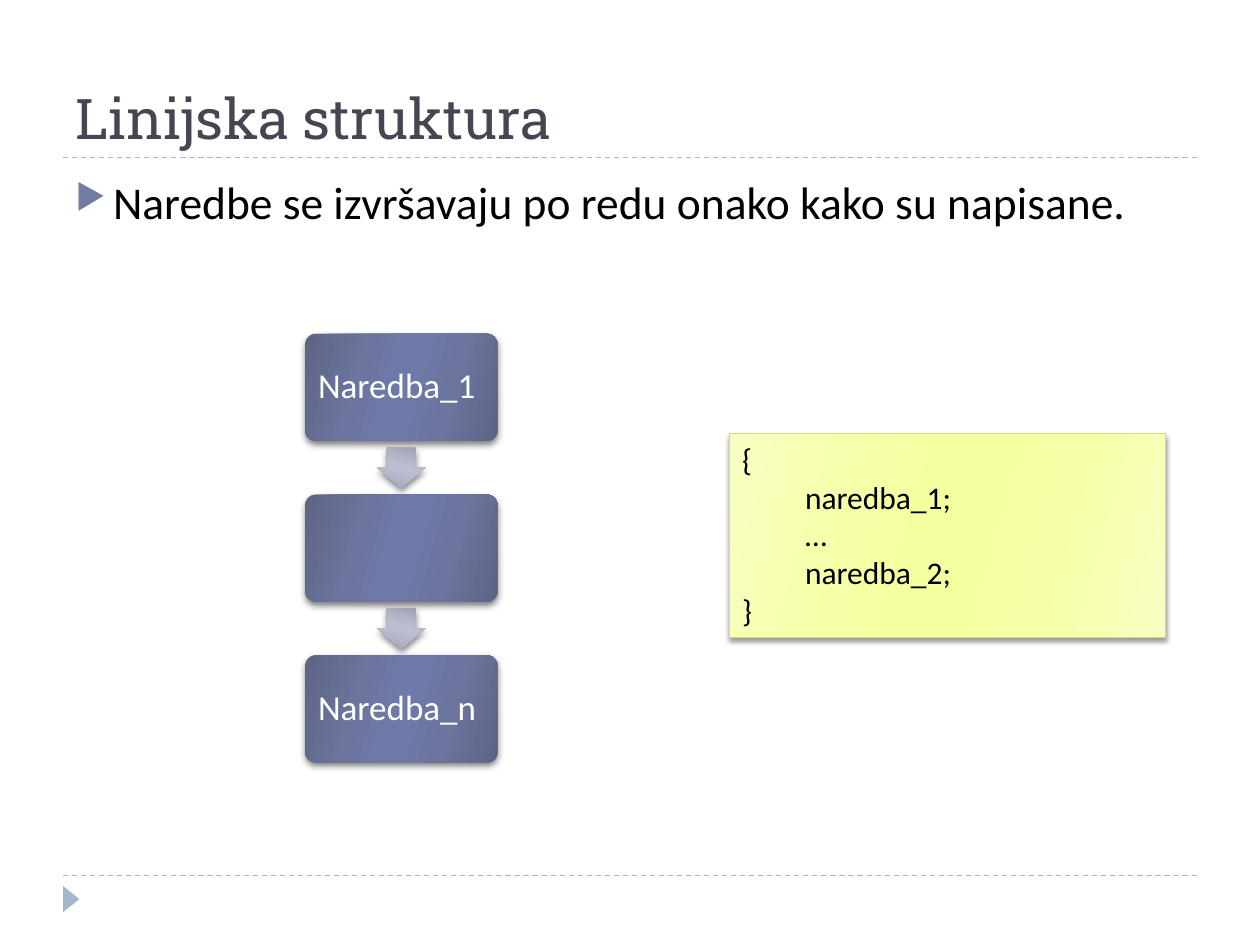
from lxml import etree
from pptx import Presentation
from pptx import util as u
from pptx.dml.color import RGBColor
from pptx.enum import dml, shapes, text
from pptx.oxml.ns import qn

SHAPE = shapes.MSO_SHAPE
STOPS = (0, 30, 45, 55, 73, 100)


def rgb(value):
    return RGBColor.from_string(value)


def sub(parent, tag, **attrs):
    return etree.SubElement(parent, qn(tag), {k: str(v) for k, v in attrs.items()})


class Deck:
    HEAD, BODY = "Roboto Slab", "Calibri"
    INK, TITLE, ACCENT, BULLET = "000000", "464653", "9FB8CD", "727CA3"
    # Edge, middle and centre tones of the symmetric gradients
    BLUE = ("5D6585", "6B759E", "6E79A7")
    GREY = ("9A9CA9", "B2B6C6", "BABED0")
    YELLOW = ("F8FEC2", "F6FFA7", "F6FF9F")

    def __init__(self):
        self.prs = Presentation()
        self.prs.slide_width, self.prs.slide_height = u.Cm(25.4), u.Cm(19.05)
        self.s = self.prs.slides.add_slide(self.prs.slide_layouts[5])

    def font(self, p, size, color, name=BODY):
        p.font.size, p.font.name = u.Pt(size), name
        p.font.color.rgb = rgb(color)

    def title(self, words, x, y, w, h):
        sp = self.s.shapes.title
        sp.left, sp.top, sp.width, sp.height = map(u.Cm, (x, y, w, h))
        tf = sp.text_frame
        tf.text = words
        tf.auto_size = text.MSO_AUTO_SIZE.NONE
        tf.vertical_anchor = text.MSO_ANCHOR.BOTTOM
        tf.paragraphs[0].alignment = text.PP_ALIGN.LEFT
        self.font(tf.paragraphs[0], 32, self.TITLE, self.HEAD)

    def bullet(self, words, x, y, w, h):
        tf = self.s.shapes.add_textbox(*map(u.Cm, (x, y, w, h))).text_frame
        tf.word_wrap = True
        p = tf.paragraphs[0]
        p.text = words
        p.space_before = u.Pt(6)
        self.font(p, 26, self.INK)
        pPr = p._p.get_or_add_pPr()
        indent = u.Cm(0.76)
        pPr.set("marL", str(indent))
        pPr.set("indent", str(-indent))
        mark = etree.Element(qn("a:buClr"))
        sub(mark, "a:srgbClr", val=self.BULLET)
        size = etree.Element(qn("a:buSzPct"), val="76000")
        char = etree.Element(qn("a:buChar"), char="▶")
        for el in (mark, size, char):
            pPr.find(qn("a:defRPr")).addprevious(el)

    def rule(self, x1, x2, y):
        c = self.s.shapes.add_connector(shapes.MSO_CONNECTOR.STRAIGHT,
                                        u.Cm(x1), u.Cm(y), u.Cm(x2), u.Cm(y))
        c.line.color.rgb = rgb(self.ACCENT)
        c.line.width = u.Pt(0.75)
        c.line.dash_style = dml.MSO_LINE.DASH
        sub(c._element.spPr, "a:effectLst")

    def shape(self, kind, x, y, w, h, adj=(), rotation=0):
        sp = self.s.shapes.add_shape(kind, *map(u.Cm, (x, y, w, h)))
        sp.rotation = rotation
        for i, value in enumerate(adj):
            sp.adjustments[i] = value
        sp.line.fill.background()
        sp.shadow.inherit = False
        return sp

    def shade(self, sp, tones, blur=4, alpha=50):
        """Give a shape a soft gradient and a shadow below it."""
        sp.fill.gradient()
        grad = sp._element.spPr.find(qn("a:gradFill"))
        for child in list(grad):
            grad.remove(child)
        stops = sub(grad, "a:gsLst")
        for pos, tone in zip(STOPS, tones + tones[::-1]):
            sub(sub(stops, "a:gs", pos=pos * 1000), "a:srgbClr", val=tone)
        sub(grad, "a:lin", ang=16 * 60000, scaled=0)
        effects = sp._element.spPr.find(qn("a:effectLst"))
        shadow = sub(effects, "a:outerShdw", blurRad=u.Pt(blur), dist=u.Pt(2),
                     dir=90 * 60000, rotWithShape=0)
        sub(sub(shadow, "a:srgbClr", val=self.INK), "a:alpha", val=alpha * 1000)

    def step(self, words, x, y, w, h):
        sp = self.shape(SHAPE.ROUNDED_RECTANGLE, x, y, w, h, [0.1])
        self.shade(sp, self.BLUE)
        if words:
            tf = sp.text_frame
            tf.text = words
            tf.margin_left = tf.margin_right = u.Cm(0.2)
            p = tf.paragraphs[0]
            p.line_spacing = 0.9
            self.font(p, 20, "FFFFFF")

    def arrow(self, cx, cy, w, h):
        sp = self.shape(SHAPE.RIGHT_ARROW, cx - w / 2, cy - h / 2, w, h, [0.6, 0.5], 90)
        self.shade(sp, self.GREY)

    def code(self, lines, x, y, w, h):
        sp = self.shape(SHAPE.RECTANGLE, x, y, w, h)
        sp.line.color.rgb = rgb("D2DA7A")
        sp.line.width = u.Pt(0.75)
        self.shade(sp, self.YELLOW, blur=3, alpha=40)
        tf = sp.text_frame
        tf.text = "\n".join(lines)
        tf.vertical_anchor = text.MSO_ANCHOR.TOP
        for p in tf.paragraphs:
            p.alignment = text.PP_ALIGN.LEFT
            self.font(p, 18, self.INK)


def main():
    d = Deck()

    # Frame: dashed rules and corner marker
    for y in (17.65, 3.18):
        d.rule(1.27, 24.13, y)
    marker = d.shape(SHAPE.ISOSCELES_TRIANGLE, 1.17, 17.96, 0.53, 0.33, rotation=90)
    marker.fill.solid()
    marker.fill.fore_color.rgb = rgb(d.ACCENT)

    # Heading and statement
    d.title("Linijska struktura", 1.27, 0.43, 22.86, 2.74)
    d.bullet("Naredbe se izvršavaju po redu onako kako su napisane.",
             1.27, 3.38, 22.86, 1.55)

    # Flow of steps, with an arrow in each gap
    x, top, w, h, pitch = 6.15, 6.73, 3.88, 2.16, 3.24
    steps = ("Naredba_1", "", "Naredba_n")
    for i, words in enumerate(steps):
        y = top + i * pitch
        d.step(words, x, y, w, h)
        if i < len(steps) - 1:
            d.arrow(x + w / 2, y + (h + pitch) / 2, 0.81, 0.97)

    # Code block
    d.code(("{", "\tnaredba_1;", "\t…", "\tnaredba_2;", "}"), 14.71, 8.74, 8.79, 4.11)

    d.prs.save("out.pptx")


if __name__ == "__main__":
    main()
